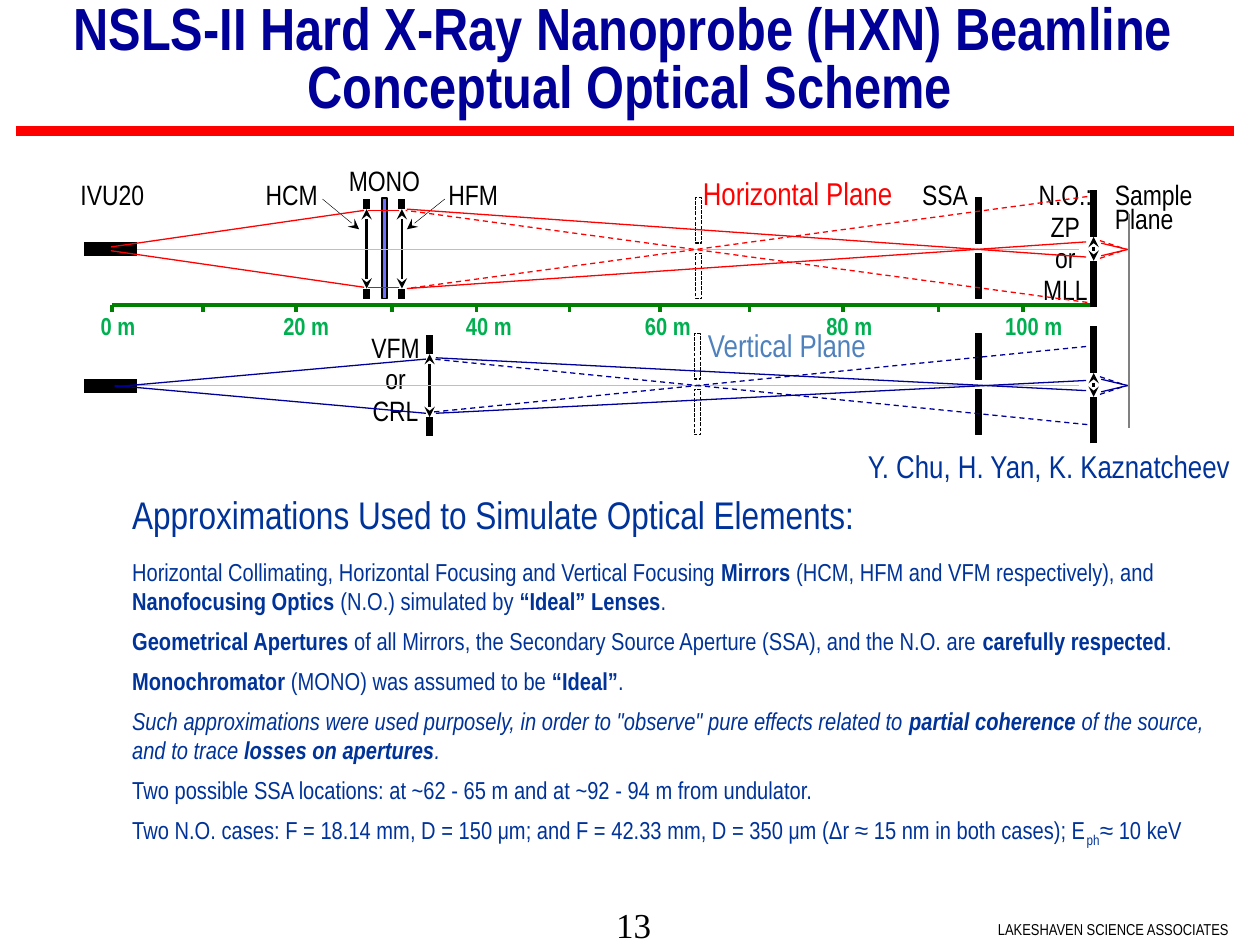
"""Builds the slide on the HXN beamline optical scheme, on a grid of 1000 columns by 750 rows."""
from dataclasses import dataclass
from typing import Optional

from lxml import etree
from pptx import Presentation
from pptx.dml.color import RGBColor
from pptx.enum.dml import MSO_LINE
from pptx.enum.shapes import MSO_CONNECTOR, MSO_SHAPE
from pptx.enum.text import MSO_ANCHOR, MSO_AUTO_SIZE, PP_ALIGN
from pptx.oxml.ns import qn
from pptx.util import Inches, Pt

STRAIGHT, RECT = MSO_CONNECTOR.STRAIGHT, MSO_SHAPE.RECTANGLE
DASH, SYS_DASH = MSO_LINE.DASH, MSO_LINE.SQUARE_DOT
LEFT, CENTER, MIDDLE = PP_ALIGN.LEFT, PP_ALIGN.CENTER, MSO_ANCHOR.MIDDLE
GROW = MSO_AUTO_SIZE.SHAPE_TO_FIT_TEXT
NARROW, SERIF = "Arial Narrow", "Times New Roman"
BLACK, RED, NAVY, BLUE, GREEN = "000000", "FF0000", "000099", "003399", "008000"
COLS, ROWS = 1000, 750

prs = Presentation()
prs.slide_width, prs.slide_height = Inches(10), Inches(7.5)
s = prs.slides.add_slide(prs.slide_layouts[5])


@dataclass
class Label:
    """A text box: place on the grid, wording and format."""
    text: str
    box: tuple
    size: float = 16
    color: str = BLACK
    wrap: bool = False
    align: int = LEFT
    spacing: Optional[float] = None
    bold: bool = False
    font: str = NARROW
    insets: tuple = (10, 5)


@dataclass
class Plane:
    """One optical plane: axis row, ray colour, stop column, solid and dashed rays."""
    axis: int
    color: str
    stop: int
    solid: list
    dashed: list


@dataclass
class Lens:
    """A focusing element: column, arrow rows and length of its stops."""
    x: int
    top: int
    bottom: int
    stop: int


def rgb(color: str) -> RGBColor:
    """Turns a hex string into a colour."""
    return RGBColor.from_string(color)


def grid(*cells: float) -> list:
    """Turns alternating columns and rows into lengths."""
    sides = ((prs.slide_width, COLS), (prs.slide_height, ROWS))
    return [int(c * sides[i % 2][0] / sides[i % 2][1]) for i, c in enumerate(cells)]


def set_font(p, size: float, color: str, font: str = NARROW, bold: bool = False) -> None:
    """Formats a whole paragraph."""
    f = p.font
    f.size, f.name, f.bold = Pt(size), font, bold
    f.color.rgb = rgb(color)


def add_line(x1, y1, x2, y2, color: str = BLACK, width: float = 0.75, dash=None, ends: tuple = ()) -> None:
    """Draws a straight line, with stealth arrowheads at the named ends."""
    c = s.shapes.add_connector(STRAIGHT, *grid(x1, y1, x2, y2))
    c.line.color.rgb = rgb(color)
    c.line.width = Pt(width)
    if dash:
        c.line.dash_style = dash
    ln = c.line._get_or_add_ln()
    for end in ends:
        etree.SubElement(ln, qn(f"a:{end}End"), type="stealth")
    etree.SubElement(c._element.spPr, qn("a:effectLst"))


def add_rect(x, y, w, h, fill: Optional[str], width: float, dash=None) -> None:
    """Draws a black-edged rectangle."""
    sp = s.shapes.add_shape(RECT, *grid(x, y, w, h))
    sp.shadow.inherit = False
    if fill:
        sp.fill.solid()
        sp.fill.fore_color.rgb = rgb(fill)
    else:
        sp.fill.background()
    sp.line.color.rgb = rgb(BLACK)
    sp.line.width = Pt(width)
    if dash:
        sp.line.dash_style = dash


def add_frame(box: tuple, wrap: bool, insets: tuple = (10, 5)):
    """Adds a text box and returns its text frame."""
    tf = s.shapes.add_textbox(*grid(*box)).text_frame
    tf.word_wrap, tf.auto_size = wrap, GROW
    tf.margin_left, tf.margin_top = tf.margin_right, tf.margin_bottom = grid(*insets)
    return tf


def add_label(label: Label) -> None:
    """Draws a label, one paragraph for each line of its text."""
    tf = add_frame(label.box, label.wrap, label.insets)
    for i, text in enumerate(label.text.split("\n")):
        p = tf.add_paragraph() if i else tf.paragraphs[0]
        p.text, p.alignment = text, label.align
        if label.spacing:
            p.line_spacing = Pt(label.spacing) if label.spacing > 1 else label.spacing
        set_font(p, label.size, label.color, label.font, label.bold)


def add_lens(lens: Lens) -> None:
    """Draws a double arrow between two stops."""
    x, top, bottom = lens.x, lens.top, lens.bottom
    add_line(x, top, x, bottom, width=1.5, ends=("head", "tail"))
    add_line(x, top, x, top - lens.stop, width=4)
    add_line(x, bottom + lens.stop, x, bottom, width=4)


def add_plane(plane: Plane) -> None:
    """Draws axis, source, apertures, nanofocusing optics and rays of a plane."""
    y, color = plane.axis, plane.color
    add_line(856, y, 98, y, "BFBFBF")
    add_line(67, y, 109, y, width=8)
    for top in (y - 41, y + 3):
        add_rect(774, top, 5, 36, BLACK, 0.5)
        add_rect(plane.stop, top, 5, 36, None, 0.75, SYS_DASH)
    add_lens(Lens(868, y - 10, y + 9, 37))
    for sign in (-1, 1):
        add_line(873, y + 7 * sign, 894, y, color, dash=DASH)
        add_line(874, y + 5 * sign, 895, y, color)
    for ray in plane.solid:
        add_line(*ray, color)
    for ray in plane.dashed:
        add_line(*ray, color, dash=DASH)


LABELS = [
    Label("13", (489, 717, 43, 33), 20, font=SERIF, insets=(0, 0), wrap=True),
    Label("LAKESHAVEN SCIENCE ASSOCIATES", (792, 725, 192, 25), 9, insets=(0, 5), wrap=True),
    Label("IVU20", (54, 136, 71, 37)),
    Label("HCM", (201, 136, 66, 37), wrap=True),
    Label("MONO", (267, 125, 78, 37)),
    Label("HFM", (346, 136, 66, 37), wrap=True),
    Label("SSA", (722, 136, 57, 37)),
    Label("N.O.:\nZP\nor\nMLL", (814, 138, 63, 111), align=CENTER, spacing=18),
    Label("Sample\vPlane", (875, 143, 82, 49), spacing=14),
    Label("VFM\vor CRL", (281, 259, 66, 86), wrap=True, align=CENTER, spacing=18),
    Label("Horizontal Plane", (548, 133, 199, 40), 18, RED, True),
    Label("Vertical Plane", (552, 254, 175, 40), 18, "4F81BD", True),
    Label("Y. Chu, H. Yan, K. Kaznatcheev", (679, 356, 311, 34), 18, BLUE, True, spacing=0.8),
]
SCALE = [(0, 70, 48), (20, 215, 57), (40, 360, 57), (60, 502, 57), (80, 646, 57), (100, 788, 66)]
TICKS = [89, 161, 235, 311, 378, 452, 524, 595, 669, 745, 812]
PLANES = [
    Plane(198, RED, 552,
          [(289, 228, 88, 199), (289, 167, 88, 196), (317, 167, 292, 167), (317, 228, 292, 228),
           (862, 192, 323, 229), (862, 204, 323, 166)],
          [(863, 240, 322, 167), (863, 156, 323, 229)]),
    Plane(306, NAVY, 551,
          [(338, 285, 91, 307), (338, 328, 91, 306), (862, 302, 346, 328), (862, 310, 346, 284)],
          [(863, 337, 344, 285), (862, 275, 344, 327)]),
]
LENSES = [Lens(291, 166, 229, 8), Lens(319, 166, 229, 8), Lens(341, 281, 331, 15)]
BODY = [
    "Horizontal Collimating, Horizontal Focusing and Vertical Focusing *Mirrors* (HCM, HFM and VFM "
    "respectively), and *Nanofocusing Optics *(N.O.) simulated by *“Ideal” Lenses*.",
    "*Geometrical Apertures *of all Mirrors, the Secondary Source Aperture (SSA), and the N.O. are "
    "*carefully respected*.",
    "*Monochromator* (MONO) was assumed to be *“Ideal”*.",
    "Such approximations were used purposely, in order to \"observe\" pure effects related to "
    "*partial coherence *of the source, and to trace *losses on apertures*.",
    "Two possible SSA locations: at ~62 - 65 m and at ~92 - 94 m from undulator.",
    "Two N.O. cases: F = 18.14 mm, D = 150 μm; and F = 42.33 mm, D = 350 μm "
    "(Δr ≈ 15 nm in both cases); E",
]
ITALIC_ROW = 3

title = s.shapes.title
title.left, title.top, title.width, title.height = grid(0, 0, 1000, 99)
tf = title.text_frame
tf.vertical_anchor, tf.word_wrap = MIDDLE, True
p = tf.paragraphs[0]
p.text = "NSLS-II Hard X-Ray Nanoprobe (HXN) Beamline \vConceptual Optical Scheme"
p.alignment, p.line_spacing = CENTER, 0.8
set_font(p, 34, NAVY, bold=True)
add_line(979, 104, 13, 104, RED, 6)

tf = add_frame((95, 391, 888, 287), True)
p = tf.paragraphs[0]
p.text = "Approximations Used to Simulate Optical Elements:"
p.line_spacing, p.space_after = Pt(22), Pt(11)
set_font(p, 22, BLUE)
for i, text in enumerate(BODY):
    p = tf.add_paragraph()
    p.space_after = Pt(6)
    set_font(p, 14, BLUE)
    p.font.italic = i == ITALIC_ROW
    for n, part in enumerate(text.split("*")):
        if part:
            r = p.add_run()
            r.text = part
            if n % 2:
                r.font.bold = True
sub, r = p.add_run(), p.add_run()
sub.text, r.text = "ph", "≈ 10 keV"
sub._r.get_or_add_rPr().set("baseline", "-25000")

for label in LABELS:
    add_label(label)
for metres, x, w in SCALE:
    add_label(Label(f"{metres} m", (x, 242, w, 34), 14, "00B050", bold=True))
add_line(869, 242, 89, 242, GREEN, 2)
for x in TICKS:
    add_line(x, 242, x, 248, GREEN, 2)
add_rect(303, 157, 4, 80, "7070FF", 1)
for x, end in ((285, 256), (323, 353)):
    add_line(x, 182, end, 158, width=0.25, ends=("head",))
add_line(896, 170, 896, 340, "808080", 1)
for lens in LENSES:
    add_lens(lens)
for plane in PLANES:
    add_plane(plane)

prs.save("out.pptx")
